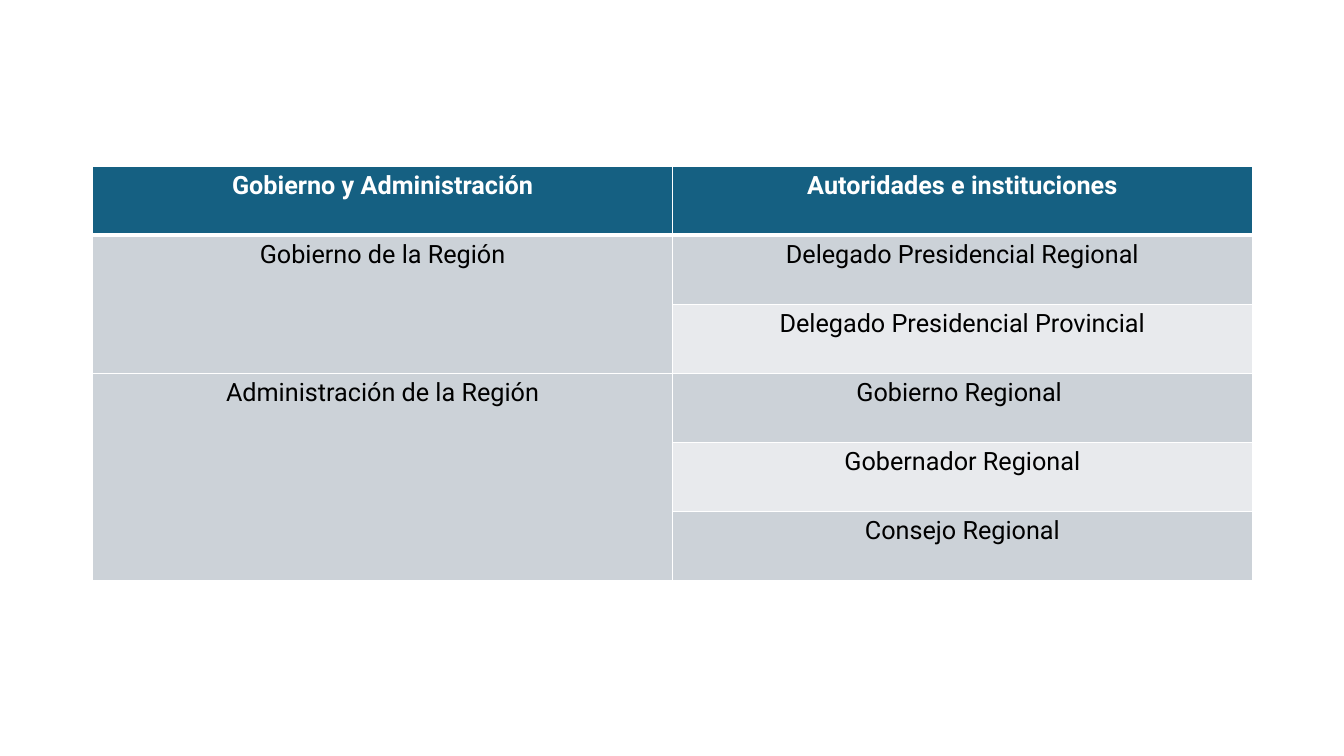
"""Build a slide with a table of regional authorities."""
from dataclasses import dataclass

from lxml.etree import SubElement
from pptx import Presentation
from pptx.dml.color import RGBColor
from pptx.enum.text import PP_ALIGN
from pptx.oxml.ns import qn
from pptx.table import Table, _Cell
from pptx.util import Inches, Pt

WIDE, HIGH = 13.33, 7.5
LEFT, TOP = 0.92, 1.65
COL, ROW = 5.75, 4.11 / 6
WHITE, BLACK = "FFFFFF", "000000"
HEAD, DARK, LIGHT = "156082", "CCD2D8", "E8EAED"
FONT = {"name": "Roboto", "size": Pt(18)}


@dataclass(frozen=True)
class Group:
    """A left-hand label and the entries that stand beside it."""
    label: str
    items: tuple[str, ...]


GROUPS = (
    Group("Gobierno y Administración", ("Autoridades e instituciones",)),
    Group("Gobierno de la Región",
          ("Delegado Presidencial Regional", "Delegado Presidencial Provincial")),
    Group("Administración de la Región",
          ("Gobierno Regional ", "Gobernador Regional", "Consejo Regional")),
)


def color(code: str) -> RGBColor:
    """Turn a hex string into a colour."""
    return RGBColor.from_string(code)


def border(cell: _Cell, row: int) -> None:
    """Draw white lines round a cell, thick below the header."""
    wide = {"L": 1, "R": 1, "T": 3 if row == 1 else 1, "B": 3 if row == 0 else 1}
    props = cell._tc.get_or_add_tcPr()
    for side, size in wide.items():
        line = SubElement(props, qn(f"a:ln{side}"), w=str(Pt(size)))
        fill = SubElement(line, qn("a:solidFill"))
        SubElement(fill, qn("a:srgbClr"), val=WHITE)


def paint(cell: _Cell, row: int, shade: str) -> None:
    """Give a cell its lines and fill."""
    border(cell, row)
    cell.fill.solid()
    cell.fill.fore_color.rgb = color(shade)


def write(cell: _Cell, text: str, head: bool) -> None:
    """Put centred text in a cell."""
    para = cell.text_frame.paragraphs[0]
    para.alignment = PP_ALIGN.CENTER
    run = para.add_run()
    run.text = text
    for key, value in (FONT | {"bold": head}).items():
        setattr(run.font, key, value)
    run.font.color.rgb = color(WHITE if head else BLACK)


def fill_group(table: Table, group: Group, first: int) -> None:
    """Fill the rows of one group and merge its label cell."""
    head = first == 0
    for step, item in enumerate(group.items):
        row = first + step
        shade = HEAD if head else (DARK, LIGHT)[step % 2]
        paint(table.cell(row, 0), row, HEAD if head else DARK)
        paint(table.cell(row, 1), row, shade)
        write(table.cell(row, 1), item, head)
    label = table.cell(first, 0)
    write(label, group.label, head)
    if len(group.items) > 1:
        label.merge(table.cell(first + len(group.items) - 1, 0))


def main() -> None:
    """Make the slide and save it."""
    deck = Presentation()
    deck.slide_width, deck.slide_height = Inches(WIDE), Inches(HIGH)
    slide = deck.slides.add_slide(deck.slide_layouts[6])
    count = sum(len(group.items) for group in GROUPS)
    table = slide.shapes.add_table(
        count, 2, Inches(LEFT), Inches(TOP), Inches(2 * COL), Inches(count * ROW)).table
    first = 0
    for group in GROUPS:
        fill_group(table, group, first)
        first += len(group.items)
    deck.save("out.pptx")


if __name__ == "__main__":
    main()
